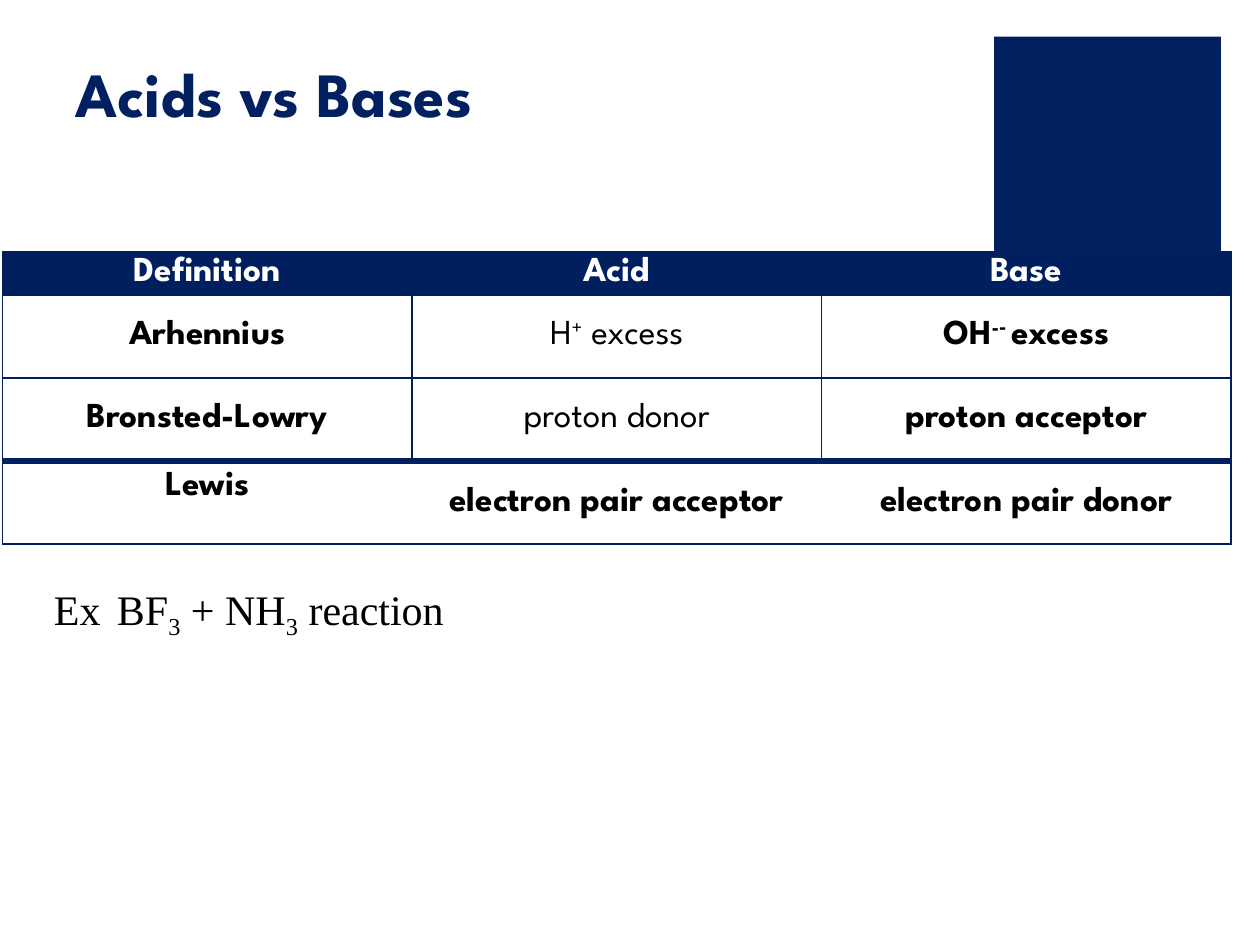
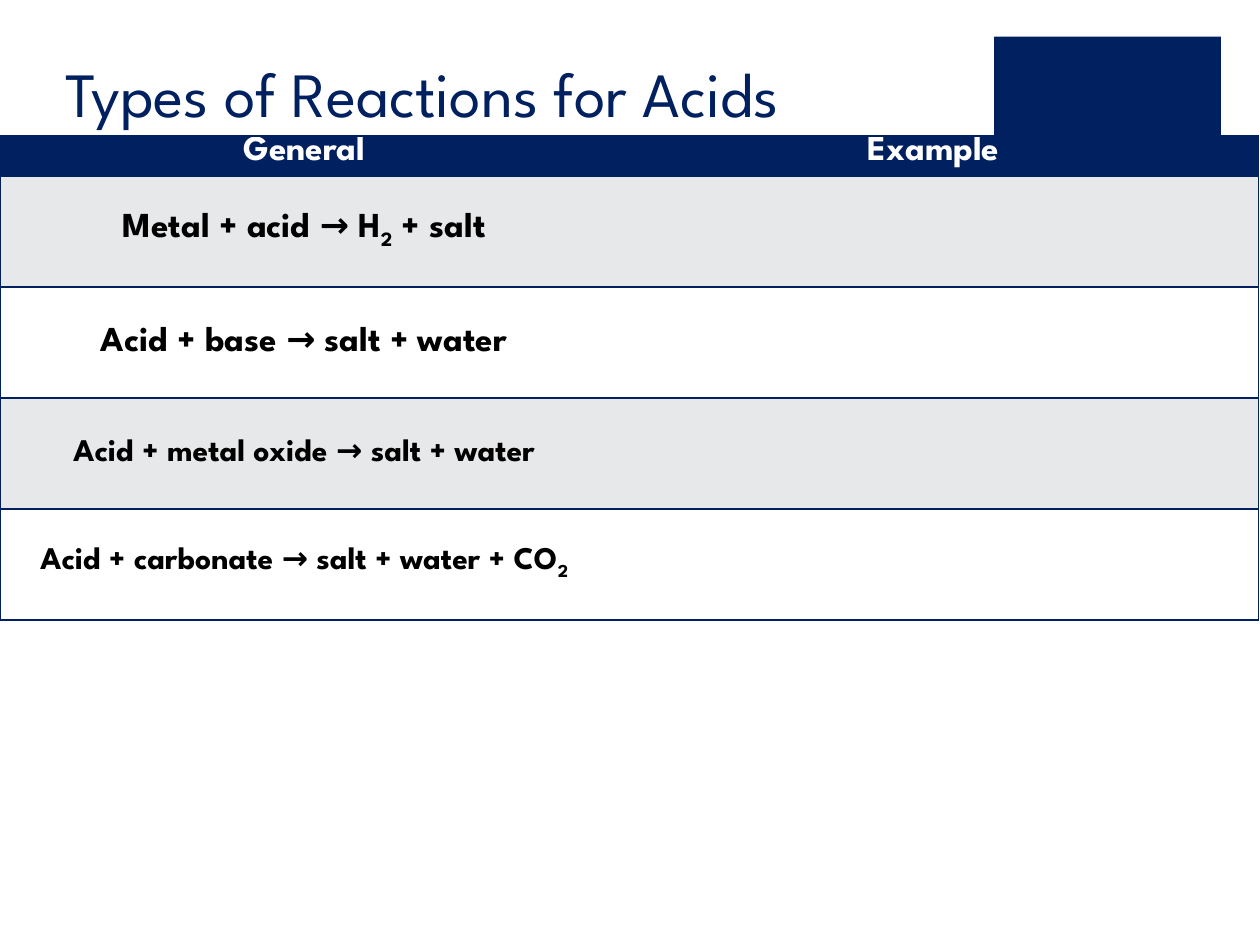
from pptx import Presentation
from pptx.dml.color import RGBColor
from pptx.enum.shapes import MSO_SHAPE
from pptx.enum.text import MSO_ANCHOR, MSO_AUTO_SIZE, PP_ALIGN
from pptx.oxml.ns import qn
from pptx.util import Inches, Pt
from lxml import etree

RECT = MSO_SHAPE.RECTANGLE
TOP, MIDDLE, BOTTOM = MSO_ANCHOR.TOP, MSO_ANCHOR.MIDDLE, MSO_ANCHOR.BOTTOM
CENTER, LEFT = PP_ALIGN.CENTER, PP_ALIGN.LEFT

W, H = Inches(10), Inches(7.5)
COL, ROW = W / 100, H / 75
HEAD_FONT, BODY_FONT = "League Spartan", "Times New Roman"
COLORS = {
    "navy": "002060",
    "grid": "001F5E",
    "stripe": "E7E8EA",
    "white": "FFFFFF",
    "black": "000000",
}


def rgb(name):
    return RGBColor.from_string(COLORS[name])


def place(x, y, w, h):
    return round(x * COL), round(y * ROW), round(w * COL), round(h * ROW)


def style(p, size, color, font=HEAD_FONT, bold=False, align=LEFT):
    p.alignment = align
    p.font.name = font
    p.font.size = Pt(size)
    p.font.bold = bold
    p.font.color.rgb = rgb(color)


def write(p, parts):
    if isinstance(parts, str):
        parts = [(parts, 0)]
    for text, baseline in parts:
        r = p.add_run()
        r.text = text
        if baseline:
            r.font._element.set("baseline", str(baseline * 1000))


def add_corner_square(layout, slide, box):
    sp = slide.shapes.add_shape(RECT, *place(*box))
    sp.shadow.inherit = False
    sp.fill.solid()
    sp.fill.fore_color.rgb = rgb("navy")
    sp.line.fill.background()
    layout.shapes.element.append(sp.element)


def add_title(slide, box, text, bold=False):
    title = slide.shapes.title
    title.left, title.top, title.width, title.height = place(*box)
    tf = title.text_frame
    tf.text = text
    tf.word_wrap = True
    tf.auto_size = MSO_AUTO_SIZE.NONE
    tf.vertical_anchor = BOTTOM
    style(tf.paragraphs[0], 36, "navy", bold=bold)


def set_border(cell, side, width, color):
    ln = etree.SubElement(cell._tc.get_or_add_tcPr(), qn(f"a:ln{side}"))
    ln.set("w", str(Pt(width)))
    if width:
        fill = etree.SubElement(ln, qn("a:solidFill"))
        etree.SubElement(fill, qn("a:srgbClr")).set("val", COLORS[color])
    else:
        etree.SubElement(ln, qn("a:noFill"))


def fill_cell(cell, color):
    if color:
        cell.fill.solid()
        cell.fill.fore_color.rgb = rgb(color)
    else:
        cell.fill.background()


def add_grid(slide, box, widths, heights, line, split_rows=(), thick_row=None, stripes=(None,)):
    n_rows, n_cols = len(heights), len(widths)
    table = slide.shapes.add_table(n_rows, n_cols, *place(*box)).table
    table.first_row = table.horz_banding = False
    for column, width in zip(table.columns, widths):
        column.width = round(width * COL)
    for row, height in zip(table.rows, heights):
        row.height = round(height * ROW)
    for r in range(n_rows):
        inner = 1 if r in split_rows else 0
        for c in range(n_cols):
            cell = table.cell(r, c)
            borders = {
                "L": 1 if c == 0 else inner,
                "R": 1 if c == n_cols - 1 else inner,
                "T": 4 if r == thick_row else 1,
                "B": 4 if r + 1 == thick_row else 1,
            }
            for side, width in borders.items():
                set_border(cell, side, width, line)
            fill_cell(cell, stripes[(r - 1) % len(stripes)] if r else line)
    return table


def write_cell(cell, parts, size=20, color="black", bold=True, anchor=MIDDLE):
    cell.margin_left = cell.margin_right = Inches(0.07)
    cell.margin_top = cell.margin_bottom = 0
    cell.vertical_anchor = anchor
    p = cell.text_frame.paragraphs[0]
    style(p, size, color, bold=bold, align=CENTER)
    write(p, parts)


def write_header(table, labels, anchor):
    for c, label in enumerate(labels):
        write_cell(table.cell(0, c), label, color="white", anchor=anchor)


def add_definitions(slide, box):
    rows = [
        ("Arhennius", [("H", 0), ("+", 30), (" excess", 0)],
         [("OH", 0), ("-‑ ", 30), ("excess", 0)]),
        ("Bronsted-Lowry", "proton donor", "proton acceptor"),
        ("Lewis", "electron pair acceptor", "electron pair donor"),
    ]
    table = add_grid(slide, box, [box[2] / 3] * 3, [3.4] + [6.6] * 3, "grid",
                     split_rows=(1, 2), thick_row=3)
    write_header(table, ["Definition", "Acid", "Base"], MIDDLE)
    for r, row in enumerate(rows, 1):
        for c, parts in enumerate(row):
            write_cell(table.cell(r, c), parts, bold=c != 1 or r == 3)
    table.cell(3, 0).margin_bottom = Inches(0.25)


def add_example(slide, box):
    tf = slide.shapes.add_textbox(*place(*box)).text_frame
    tf.word_wrap = False
    tf.auto_size = MSO_AUTO_SIZE.SHAPE_TO_FIT_TEXT
    p = tf.paragraphs[0]
    style(p, 24, "black", BODY_FONT)
    write(p, [("Ex\tBF", 0), ("3", -25), (" + NH", 0), ("3", -25), (" reaction", 0)])


def add_reactions(slide, box):
    reactions = [
        ([("Metal + acid → H", 0), ("2", -25), (" + salt", 0)], 20),
        ("Acid + base → salt + water", 20),
        ("Acid + metal oxide → salt + water", 18),
        ([("Acid + carbonate → salt + water + CO", 0), ("2", -25)], 18),
    ]
    table = add_grid(slide, box, [48.3, box[2] - 48.3], [3.2] + [8.8] * 4, "navy",
                     stripes=("stripe", "white"))
    write_header(table, ["General", "Example"], TOP)
    for r, (parts, size) in enumerate(reactions, 1):
        write_cell(table.cell(r, 0), parts, size)


def main():
    prs = Presentation()
    prs.slide_width, prs.slide_height = W, H
    layout = prs.slide_layouts[5]

    slide = prs.slides.add_slide(layout)
    add_corner_square(layout, slide, (78.9, 2.9, 18, 18))
    add_title(slide, (5, 2.5, 73.3, 8.3), "Acids vs Bases", bold=True)
    add_definitions(slide, (0.2, 20, 97.5, 23.2))
    add_example(slide, (3.3, 45.8, 38.6, 5))

    slide = prs.slides.add_slide(layout)
    add_title(slide, (4.2, 2.5, 80.8, 8.3), "Types of Reactions for Acids")
    add_reactions(slide, (0, 10.8, 99.9, 38.4))

    prs.save("out.pptx")


if __name__ == "__main__":
    main()
